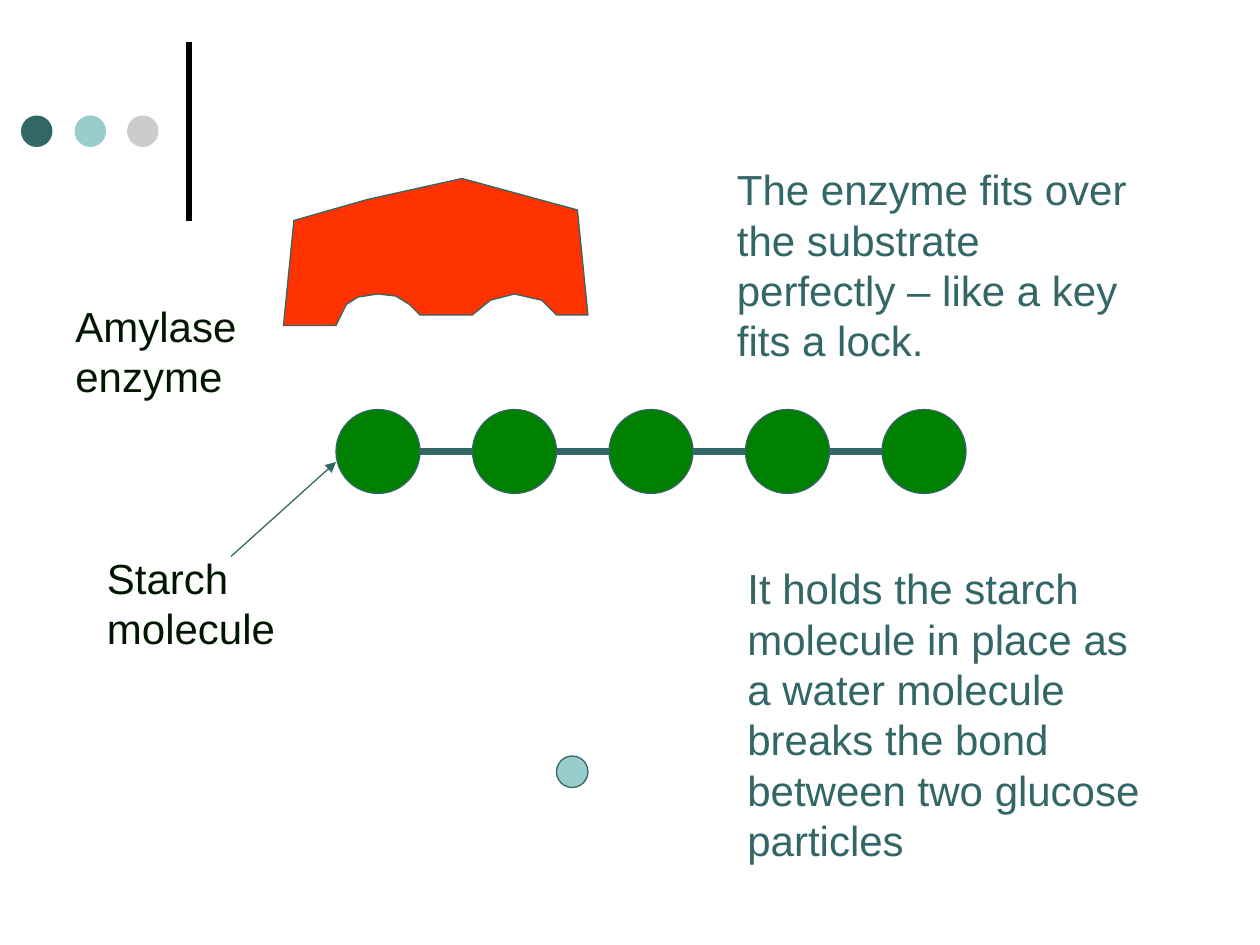
from typing import NamedTuple

from lxml import etree
from pptx import Presentation
from pptx import util as u
from pptx.dml import color
from pptx.enum import shapes, text
from pptx.oxml import ns

PX = 7620  # EMU per px, 120 px to the inch
INK = {
    "teal": "336666", "aqua": "99CCCC", "grey": "CCCCCC", "black": "000000",
    "green": "008000", "red": "FF3300", "dark": "011501",
}


class Disc(NamedTuple):
    x: int
    y: int
    size: int
    fill: str
    edge: str = ""


class Rule(NamedTuple):
    x1: int
    y1: int
    x2: int
    y2: int
    ink: str
    width: float
    arrow: bool = False


class Note(NamedTuple):
    x: int
    y: int
    w: int
    h: int
    ink: str
    words: str


def rgb(name: str) -> color.RGBColor:
    return color.RGBColor.from_string(INK[name])


def paint(shape, fill: str, edge: str) -> None:
    shape.shadow.inherit = False
    shape.fill.solid()
    shape.fill.fore_color.rgb = rgb(fill)
    if edge:
        shape.line.color.rgb = rgb(edge)
        shape.line.width = u.Pt(0.75)
    else:
        shape.line.fill.background()


def draw_disc(slide, disc: Disc) -> None:
    box = (n * PX for n in (disc.x, disc.y, disc.size, disc.size))
    shape = slide.shapes.add_shape(shapes.MSO_SHAPE.OVAL, *box)
    paint(shape, disc.fill, disc.edge)


def draw_rule(slide, rule: Rule) -> None:
    ends = (n * PX for n in rule[:4])
    line = slide.shapes.add_connector(shapes.MSO_CONNECTOR.STRAIGHT, *ends)
    line.line.color.rgb = rgb(rule.ink)
    line.line.width = u.Pt(rule.width)
    props = line._element.spPr
    if rule.arrow:
        stroke = props.find(ns.qn("a:ln"))
        etree.SubElement(stroke, ns.qn("a:tailEnd"), type="triangle")
    etree.SubElement(props, ns.qn("a:effectLst"))


def draw_note(slide, note: Note) -> None:
    box = slide.shapes.add_textbox(*(n * PX for n in note[:4]))
    frame = box.text_frame
    frame.word_wrap = True
    frame.auto_size = text.MSO_AUTO_SIZE.SHAPE_TO_FIT_TEXT
    run = frame.paragraphs[0].add_run()
    run.text = note.words
    run.font.name = "Arial"
    run.font.size = u.Pt(24)
    run.font.color.rgb = rgb(note.ink)


def draw_path(slide, points: list[tuple[int, int]], fill: str, edge: str) -> None:
    path = slide.shapes.build_freeform(*points[0], scale=PX)
    path.add_line_segments(points[1:], close=True)
    paint(path.convert_to_shape(), fill, edge)


# Starch chain: glucose units and the bonds between them
COUNT, LEFT, TOP, SIZE, STEP = 5, 320, 390, 80, 130
MID = TOP + SIZE // 2
UNITS = [Disc(LEFT + i * STEP, TOP, SIZE, "green", "teal") for i in range(COUNT)]
BONDS = [Rule(a.x + SIZE, MID, b.x, MID, "teal", 4.5)
         for a, b in zip(UNITS, UNITS[1:])]

# Corner trim
TRIM = [Disc(x, 110, 30, ink)
        for x, ink in ((20, "teal"), (71, "aqua"), (121, "grey"))]
BAR = Rule(180, 210, 180, 40, "black", 3)

# Enzyme outline, with two notches below for the chain
ENZYME = [
    (270, 310), (320, 310), (330, 290), (341, 283), (360, 280), (377, 282),
    (390, 290), (400, 300), (450, 300), (467, 286), (490, 280), (516, 286),
    (530, 300), (560, 300), (550, 200), (440, 170), (350, 190), (280, 210),
]
WATER = Disc(530, 720, 30, "aqua", "teal")
ARROW = Rule(220, 530, 320, 440, "teal", 0.75, True)

# Labels and explanations
NOTES = [
    Note(690, 150, 400, 204, "teal",
         "The enzyme fits over the substrate perfectly – like a key fits a lock."),
    Note(700, 530, 410, 300, "teal",
         "It holds the starch molecule in place as a water molecule breaks "
         "the bond between two glucose particles"),
    Note(90, 520, 200, 108, "dark", "Starch molecule"),
    Note(60, 280, 180, 108, "dark", "Amylase enzyme"),
]


def main() -> None:
    deck = Presentation()
    deck.slide_width, deck.slide_height = 1200 * PX, 900 * PX
    slide = deck.slides.add_slide(deck.slide_layouts[6])
    draw_rule(slide, BAR)
    for disc in TRIM + UNITS:
        draw_disc(slide, disc)
    for bond in BONDS:
        draw_rule(slide, bond)
    draw_path(slide, ENZYME, "red", "teal")
    draw_disc(slide, WATER)
    draw_rule(slide, ARROW)
    for note in NOTES:
        draw_note(slide, note)
    deck.save("out.pptx")


if __name__ == "__main__":
    main()
